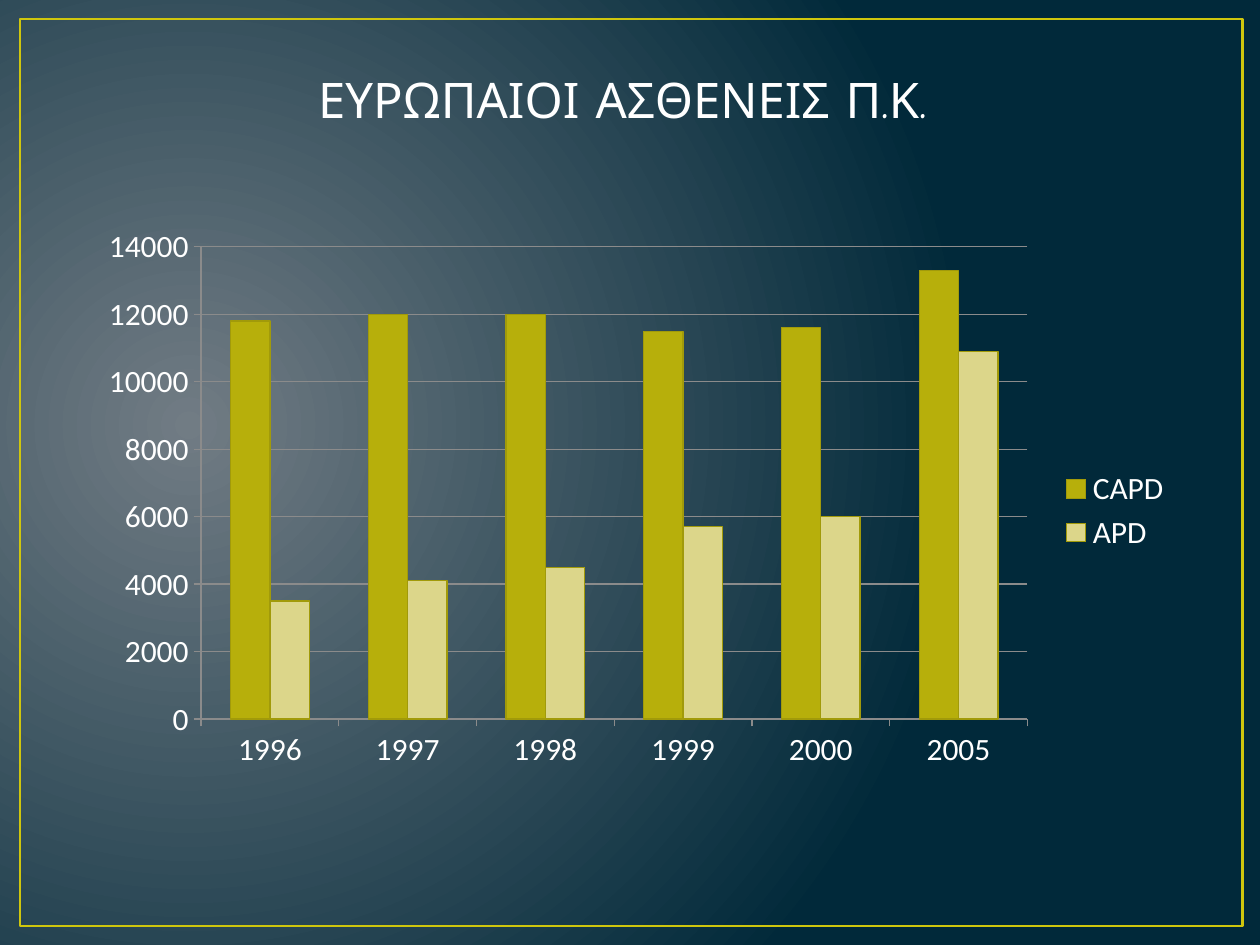
from pptx import Presentation
from pptx.chart.data import CategoryChartData
from pptx.dml.color import RGBColor
from pptx.enum import chart as charts, shapes, text
from pptx.oxml import parse_xml
from pptx.oxml.ns import nsdecls, qn
from pptx.util import Inches, Pt

# Content
TITLE = "ΕΥΡΩΠΑΙΟΙ ΑΣΘΕΝΕΙΣ Π.Κ."
YEARS = ["1996", "1997", "1998", "1999", "2000", "2005"]
PATIENTS = {
    "CAPD": [11800, 12000, 12000, 11500, 11600, 13300],
    "APD": [3500, 4100, 4500, 5700, 6000, 10900],
}
COLORS = {
    "glow": "717C84", "night": "01293A", "frame": "CFC60D", "text": "FFFFFF",
    "grid": "8B8B8B", "CAPD": "B7AF0B", "APD": "DCD68A", "bar edge": "A19A0A",
}
PLOT = {"x": 0.104, "y": 0.019, "w": 0.753, "h": 0.861}


def color(name):
    return RGBColor.from_string(COLORS[name])


def set_font(font, **values):
    for name, value in values.items():
        setattr(font, name, value)
    font.color.rgb = color("text")


def set_line(line, name, width):
    line.color.rgb = color(name)
    line.width = Pt(width)


presentation = Presentation()
presentation.slide_width, presentation.slide_height = Inches(10), Inches(7.5)
slide = presentation.slides.add_slide(presentation.slide_layouts[6])

# Background: circular glow left of the centre
background = slide.background.fill
background.gradient()
for stop, name in zip(background.gradient_stops, ("glow", "night")):
    stop.color.rgb = color(name)
gradient = slide.element.find(".//" + qn("a:gradFill"))
gradient.replace(gradient.find(qn("a:lin")), parse_xml(
    f'<a:path {nsdecls("a")} path="circle">'
    '<a:fillToRect l="15000" t="50000" r="85000" b="60000"/></a:path>'))

# Frame
frame = slide.shapes.add_shape(
    shapes.MSO_SHAPE.RECTANGLE, Inches(0.16), Inches(0.15), Inches(9.7), Inches(7.2))
frame.shadow.inherit = False
frame.fill.background()
set_line(frame.line, "frame", 1.5)

# Column chart
data = CategoryChartData()
data.categories = YEARS
for name, values in PATIENTS.items():
    data.add_series(name, values)
chart = slide.shapes.add_chart(
    charts.XL_CHART_TYPE.COLUMN_CLUSTERED,
    Inches(0.69), Inches(1.81), Inches(8.71), Inches(4.42), data).chart
chart.has_title = False
set_font(chart.font, name="Calibri", size=Pt(18))

columns = chart.plots[0]
columns.vary_by_categories = False
columns.gap_width, columns.overlap = 150, 0
for series in columns.series:
    series.format.fill.solid()
    series.format.fill.fore_color.rgb = color(series.name)
    set_line(series.format.line, "bar edge", 0.75)

# Axes and grid
values_axis, years_axis = chart.value_axis, chart.category_axis
values_axis.minimum_scale, values_axis.maximum_scale = 0, 14000
values_axis.major_unit = 2000
years_axis.tick_label_position = charts.XL_TICK_LABEL_POSITION.LOW
for axis in (values_axis, years_axis):
    axis.major_tick_mark = charts.XL_TICK_MARK.OUTSIDE
    set_line(axis.format.line, "grid", 0.75)
set_line(values_axis.major_gridlines.format.line, "grid", 0.75)

# Legend
chart.has_legend = True
chart.legend.position = charts.XL_LEGEND_POSITION.RIGHT
chart.legend.include_in_layout = False

# Fixed inner plot area
plot_area = chart.element.find(".//" + qn("c:plotArea"))
for layout in plot_area.findall(qn("c:layout")):
    plot_area.remove(layout)
modes = '<c:xMode val="edge"/><c:yMode val="edge"/>'
sides = "".join(f'<c:{side} val="{share}"/>' for side, share in PLOT.items())
plot_area.insert(0, parse_xml(
    f'<c:layout {nsdecls("c")}><c:manualLayout><c:layoutTarget val="inner"/>'
    f'{modes}{sides}</c:manualLayout></c:layout>'))

# Title
title = slide.shapes.add_textbox(Inches(1.99), Inches(0.5), Inches(5.9), Inches(0.57))
title.text_frame.word_wrap = False
title.text_frame.auto_size = text.MSO_AUTO_SIZE.SHAPE_TO_FIT_TEXT
paragraph = title.text_frame.paragraphs[0]
paragraph.alignment = text.PP_ALIGN.CENTER
run = paragraph.add_run()
run.text = TITLE
set_font(run.font, name="Comic Neue", size=Pt(28))

presentation.save("out.pptx")
